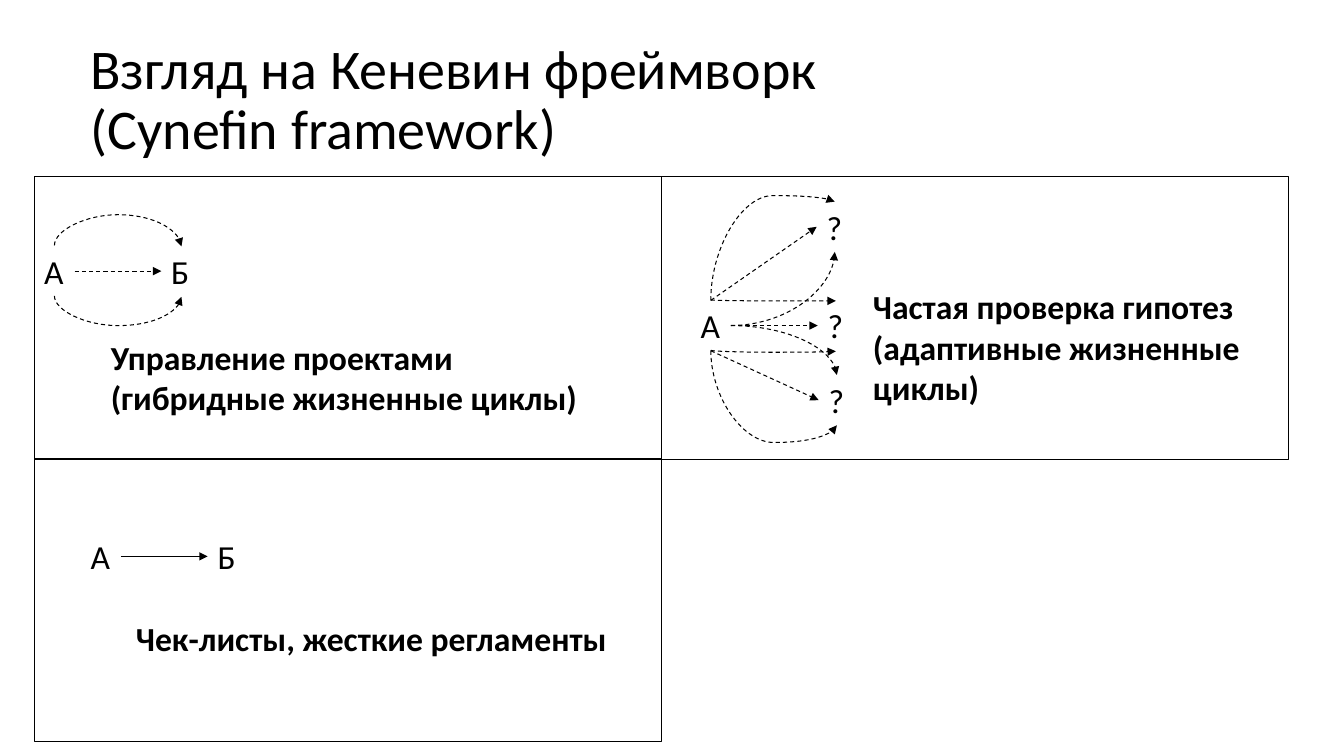
from dataclasses import dataclass

from lxml import etree
from pptx import Presentation
from pptx.dml.color import RGBColor
from pptx.enum.dml import MSO_LINE
from pptx.enum.shapes import MSO_CONNECTOR, MSO_SHAPE
from pptx.enum.text import MSO_ANCHOR
from pptx.oxml.ns import qn
from pptx.shapes.autoshape import Shape
from pptx.shapes.connector import Connector
from pptx.shapes.shapetree import SlideShapes
from pptx.util import Emu, Pt

BLACK = RGBColor(0x00, 0x00, 0x00)
FONT = "Calibri"
DASH = MSO_LINE.DASH
STRAIGHT = MSO_CONNECTOR.STRAIGHT
CURVE = MSO_CONNECTOR.CURVE
RECTANGLE = MSO_SHAPE.RECTANGLE
MIDDLE = MSO_ANCHOR.MIDDLE
TOP, LEFT, BOTTOM, RIGHT = range(4)
EMU_PER_PX = 9144
LINE_WIDTH = Pt(0.75)
QUARTER_TURN_LEFT = 270
CELL_WIDTH, CELL_HEIGHT = 622, 281


@dataclass(frozen=True)
class Text:
    text: str
    left: int
    top: int
    width: int
    height: int
    size: int = 24
    bold: bool = False


@dataclass(frozen=True)
class Arrow:
    start: str
    start_side: int
    end: str
    end_side: int
    dashed: bool = True


@dataclass(frozen=True)
class Arc:
    start_x: int
    start_y: int
    end_x: int
    end_y: int
    crest_y: int


@dataclass(frozen=True)
class Bend:
    start_x: int
    start_y: int
    end_x: int
    end_y: int


CELLS = [(34, 455), (34, 175), (656, 175)]

TITLE = Text("Взгляд на Кеневин фреймворк\v(Cynefin framework)", 80, 28, 1073, 145, 40)

CAPTIONS = [
    Text("Чек-листы, жесткие регламенты", 125, 608, 518, 44, bold=True),
    Text("Управление проектами (гибридные жизненные циклы)", 100, 329, 512, 77, bold=True),
    Text("Частая проверка гипотез\n(адаптивные жизненные циклы)", 856, 279, 421, 146, bold=True),
]

LABELS = {
    "checklist start": Text("А", 80, 527, 40, 50),
    "checklist goal": Text("Б", 206, 527, 38, 50),
    "project start": Text("А", 34, 244, 40, 50),
    "project goal": Text("Б", 160, 244, 38, 50),
    "hypothesis start": Text("А", 685, 298, 40, 50),
    "upper unknown": Text("?", 810, 200, 36, 50),
    "middle unknown": Text("?", 811, 298, 36, 50),
    "lower unknown": Text("?", 812, 372, 36, 50),
}

ARROWS = [
    Arrow("checklist start", RIGHT, "checklist goal", LEFT, dashed=False),
    Arrow("project start", RIGHT, "project goal", LEFT),
    Arrow("hypothesis start", RIGHT, "middle unknown", LEFT),
    Arrow("hypothesis start", TOP, "upper unknown", LEFT),
    Arrow("hypothesis start", BOTTOM, "lower unknown", LEFT),
]

ARCS = [
    Arc(54, 244, 180, 244, 213),
    Arc(54, 294, 180, 294, 324),
    Arc(705, 298, 829, 298, 299),
    Arc(705, 348, 829, 348, 350),
    Arc(705, 298, 828, 200, 194),
    Arc(705, 348, 830, 422, 439),
]

BENDS = [Bend(725, 323, 828, 250), Bend(725, 323, 830, 372)]


def px(value: float) -> Emu:
    return Emu(round(value * EMU_PER_PX))


def add_text(shapes: SlideShapes, item: Text) -> Shape:
    box = shapes.add_textbox(px(item.left), px(item.top), px(item.width), px(item.height))
    box.text_frame.word_wrap = True
    box.text_frame.text = item.text
    for para in box.text_frame.paragraphs:
        for span in para.runs:
            span.font.name = FONT
            span.font.size = Pt(item.size)
            span.font.bold = item.bold
            span.font.color.rgb = BLACK
    return box


def add_cell(shapes: SlideShapes, left: int, top: int) -> None:
    cell = shapes.add_shape(RECTANGLE, px(left), px(top), px(CELL_WIDTH), px(CELL_HEIGHT))
    cell.shadow.inherit = False
    cell.fill.background()
    cell.line.color.rgb = BLACK
    cell.line.width = LINE_WIDTH


def style_arrow(connector: Connector, dashed: bool = True) -> None:
    line = connector.line
    line.color.rgb = BLACK
    line.width = LINE_WIDTH
    if dashed:
        line.dash_style = DASH
    properties = connector._element.spPr
    etree.SubElement(properties.find(qn("a:ln")), qn("a:tailEnd"), type="triangle")
    etree.SubElement(properties, qn("a:effectLst"))


def add_arrow(shapes: SlideShapes, arrow: Arrow, boxes: dict[str, Shape]) -> None:
    connector = shapes.add_connector(STRAIGHT, 0, 0, 0, 0)
    connector.begin_connect(boxes[arrow.start], arrow.start_side)
    connector.end_connect(boxes[arrow.end], arrow.end_side)
    style_arrow(connector, arrow.dashed)


def add_arc(shapes: SlideShapes, arc: Arc) -> None:
    span = arc.end_x - arc.start_x
    rise = max(abs(arc.end_y - arc.start_y), 1)
    direction = 1 if arc.end_y >= arc.start_y else -1
    left = (arc.start_x + arc.end_x - rise) / 2
    top = (arc.start_y + arc.end_y - span) / 2
    connector = shapes.add_connector(CURVE, px(left), px(top), px(left + rise), px(top + span))
    properties = connector._element.spPr
    frame = properties.find(qn("a:xfrm"))
    frame.set("rot", str(QUARTER_TURN_LEFT * 60000))
    if direction > 0:
        frame.set("flipH", "1")
    crest = round(direction * (arc.crest_y - arc.start_y) / rise * 100000)
    guides = properties.find(qn("a:prstGeom")).find(qn("a:avLst"))
    etree.SubElement(guides, qn("a:gd"), name="adj1", fmla=f"val {crest}")
    style_arrow(connector)


def add_bend(shapes: SlideShapes, bend: Bend) -> None:
    connector = shapes.add_connector(
        CURVE, px(bend.start_x), px(bend.start_y), px(bend.end_x), px(bend.end_y)
    )
    connector._element.spPr.find(qn("a:prstGeom")).set("prst", "curvedConnector2")
    style_arrow(connector)


def main() -> None:
    deck = Presentation()
    deck.slide_width, deck.slide_height = px(1333), px(750)
    page = deck.slides.add_slide(deck.slide_layouts[6])
    shapes = page.shapes

    title = add_text(shapes, TITLE)
    title.text_frame.vertical_anchor = MIDDLE
    title.text_frame.paragraphs[0].line_spacing = 0.9

    for left, top in CELLS:
        add_cell(shapes, left, top)
    boxes = {name: add_text(shapes, label) for name, label in LABELS.items()}
    for arrow in ARROWS:
        add_arrow(shapes, arrow, boxes)
    for arc in ARCS:
        add_arc(shapes, arc)
    for bend in BENDS:
        add_bend(shapes, bend)
    for caption in CAPTIONS:
        add_text(shapes, caption)

    deck.save("out.pptx")


if __name__ == "__main__":
    main()
